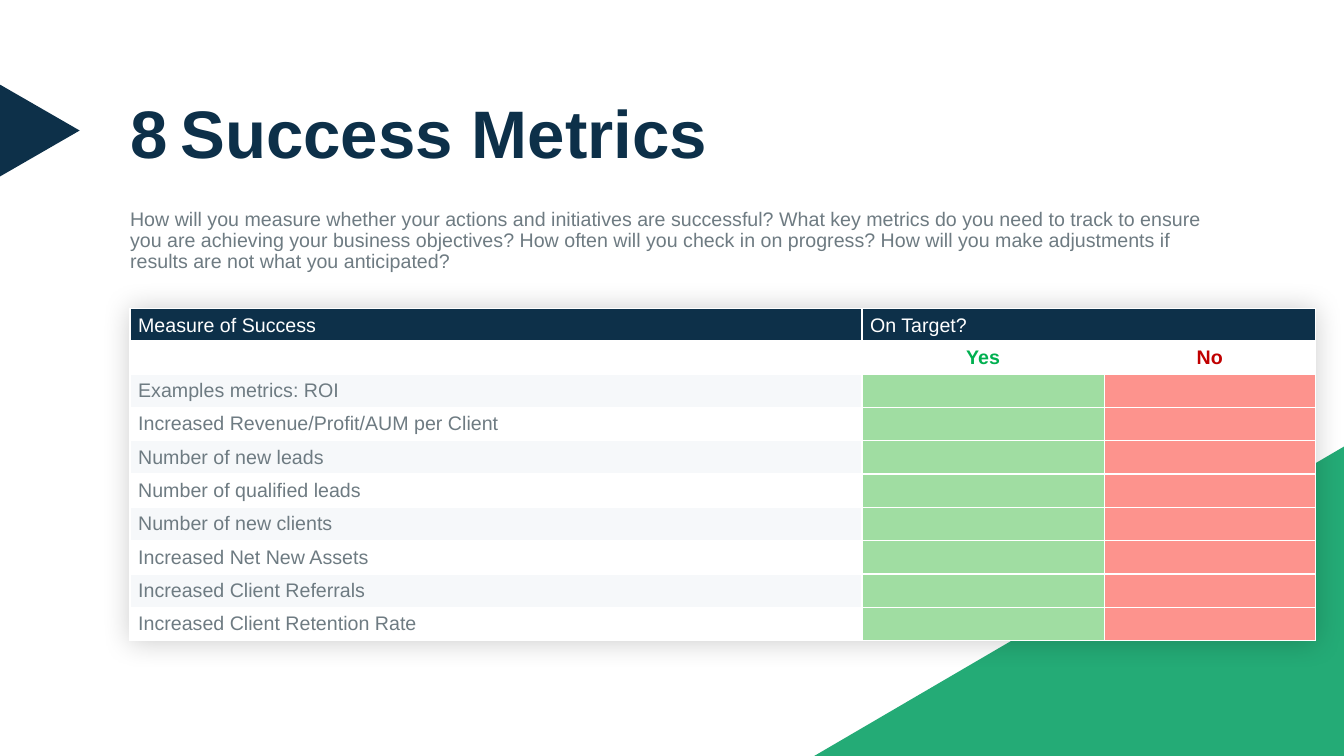
import pptx
import pptx.dml.color
import pptx.enum.shapes
import pptx.enum.text
import pptx.oxml
import pptx.oxml.ns
import pptx.util

RGB = pptx.dml.color.RGBColor
NAVY = RGB(0x0D, 0x30, 0x49)
GREEN = RGB(0x24, 0xAB, 0x76)
GREY = RGB(0x6E, 0x7B, 0x82)
WHITE = RGB(0xFF, 0xFF, 0xFF)
PALE = RGB(0xF6, 0xF8, 0xFA)
MINT = RGB(0xA0, 0xDD, 0xA2)
ROSE = RGB(0xFD, 0x93, 0x8D)
YES = RGB(0x00, 0xB0, 0x50)
NO = RGB(0xC0, 0x00, 0x00)

SHAPE = pptx.enum.shapes.MSO_SHAPE
ANCHOR = pptx.enum.text.MSO_ANCHOR
ALIGN = pptx.enum.text.PP_ALIGN
NS = pptx.oxml.ns.nsdecls("a")

# Places are left, top, width and height in percent of the slide.
LEFT, WIDTH = 9.68, 80.64
INTRO = (
    "How will you measure whether your actions and initiatives are successful? "
    "What key metrics do you need to track to ensure you are achieving your "
    "business objectives? How often will you check in on progress? How will you "
    "make adjustments if results are not what you anticipated?"
)
METRICS = [
    "Examples metrics: ROI",
    "Increased Revenue/Profit/AUM per Client",
    "Number of new leads",
    "Number of qualified leads",
    "Number of new clients",
    "Increased Net New Assets",
    "Increased Client Referrals",
    "Increased Client Retention Rate",
]


def node(xml):
    return pptx.oxml.parse_xml(xml)


class Page:
    face = "Arial"
    size = 14

    def __init__(self, deck):
        self.deck = deck
        self.slide = deck.slides.add_slide(deck.slide_layouts[1])

    def box(self, left, top, width, height):
        """Turn percent of the slide into lengths."""
        wide, high = self.deck.slide_width, self.deck.slide_height
        return [
            int(part * full / 100)
            for part, full in ((left, wide), (top, high), (width, wide), (height, high))
        ]

    def run(self, para, text, color, size=None, bold=False):
        run = para.add_run()
        run.text = text
        run.font.name = self.face
        run.font.size = pptx.util.Pt(size or self.size)
        run.font.bold = bold
        run.font.color.rgb = color

    def shape(self, kind, place, color, turn=0, flip=False):
        shape = self.slide.shapes.add_shape(kind, *self.box(*place))
        shape.shadow.inherit = False
        shape.fill.solid()
        shape.fill.fore_color.rgb = color
        shape.line.fill.background()
        shape.rotation = turn
        if flip:
            shape._element.spPr.xfrm.set("flipH", "1")

    def text(self, index, place, text, color, size=None, bold=False, tab=None):
        """Fill a placeholder; tab is a stop in inches."""
        holder = self.slide.placeholders[index]
        holder.left, holder.top, holder.width, holder.height = self.box(*place)
        frame = holder.text_frame
        frame.word_wrap = True
        frame.auto_size = pptx.enum.text.MSO_AUTO_SIZE.NONE
        frame.vertical_anchor = ANCHOR.TOP
        frame.margin_left = frame.margin_right = 0
        frame.margin_top = frame.margin_bottom = 0
        para = frame.paragraphs[0]
        props = para._p.get_or_add_pPr()
        props.set("marL", "0")
        props.set("indent", "0")
        props.append(node(f"<a:buNone {NS}/>"))
        if tab:
            stop = pptx.util.Inches(tab)
            props.append(node(f'<a:tabLst {NS}><a:tab pos="{stop}" algn="l"/></a:tabLst>'))
        para.alignment = ALIGN.LEFT
        para.line_spacing = 0.9
        para.space_before = pptx.util.Pt(0)
        self.run(para, text, color, size, bold)

    def grid(self, place, cols, rows):
        """Add a plain table with a soft shadow; cols and rows are proportions."""
        frame = self.slide.shapes.add_table(len(rows), len(cols), *self.box(*place))
        table = frame.table
        table.first_row = table.horz_banding = False
        table._tbl.tblPr.insert(0, node(
            f'<a:effectLst {NS}><a:outerShdw blurRad="254000" dist="0" algn="ctr">'
            '<a:srgbClr val="000000"><a:alpha val="20000"/></a:srgbClr>'
            "</a:outerShdw></a:effectLst>"
        ))
        for col, part in zip(table.columns, cols):
            col.width = int(frame.width * part / sum(cols))
        for row, part in zip(table.rows, rows):
            row.height = int(frame.height * part / sum(rows))
        return table

    def cell(self, cell, fill, text="", color=GREY, bold=False, align=ALIGN.LEFT, base=1):
        """Style a cell; base is the width of its bottom border in points."""
        props = cell._tc.get_or_add_tcPr()
        for side, width in (("L", 1), ("R", 1), ("T", 1), ("B", base)):
            props.append(node(
                f'<a:ln{side} {NS} w="{pptx.util.Pt(width)}"><a:solidFill>'
                f'<a:srgbClr val="{WHITE}"/></a:solidFill></a:ln{side}>'
            ))
        cell.fill.solid()
        cell.fill.fore_color.rgb = fill
        cell.vertical_anchor = ANCHOR.MIDDLE
        cell.margin_left = cell.margin_right = pptx.util.Inches(0.08)
        cell.margin_top = cell.margin_bottom = pptx.util.Inches(0.04)
        para = cell.text_frame.paragraphs[0]
        para.alignment = align
        if text:
            self.run(para, text, color, bold=bold)
        else:
            para._p.append(node(f'<a:endParaRPr {NS} sz="{self.size * 100}"/>'))


def main():
    deck = pptx.Presentation()
    deck.slide_width = pptx.util.Inches(13.33)
    deck.slide_height = pptx.util.Inches(7.5)
    page = Page(deck)

    page.shape(SHAPE.RIGHT_TRIANGLE, (60.32, 59.07, 39.68, 41.2), GREEN, flip=True)
    page.shape(SHAPE.ISOSCELES_TRIANGLE, (-0.45, 12, 6.83, 10.53), NAVY, turn=90)
    page.text(0, (LEFT, 13.33, WIDTH, 10), "8\tSuccess Metrics", NAVY, 48, True, tab=0.74)
    page.text(1, (LEFT, 27.73, WIDTH, 8.53), INTRO, GREY)

    table = page.grid(
        (LEFT, 40.8, WIDTH, 44), (7.26, 1.79, 1.7), [34, 30] + [34] * len(METRICS)
    )
    for col, text in enumerate(("Measure of Success", "On Target?", "")):
        page.cell(table.cell(0, col), NAVY, text, WHITE, base=3)
    table.cell(0, 1).merge(table.cell(0, 2))
    for col, (text, color) in enumerate((("", GREY), ("Yes", YES), ("No", NO))):
        page.cell(table.cell(1, col), WHITE, text, color, True, ALIGN.CENTER)
    for row, metric in enumerate(METRICS, 2):
        page.cell(table.cell(row, 0), WHITE if row % 2 else PALE, metric)
        page.cell(table.cell(row, 1), MINT)
        page.cell(table.cell(row, 2), ROSE)

    deck.save("out.pptx")


if __name__ == "__main__":
    main()
